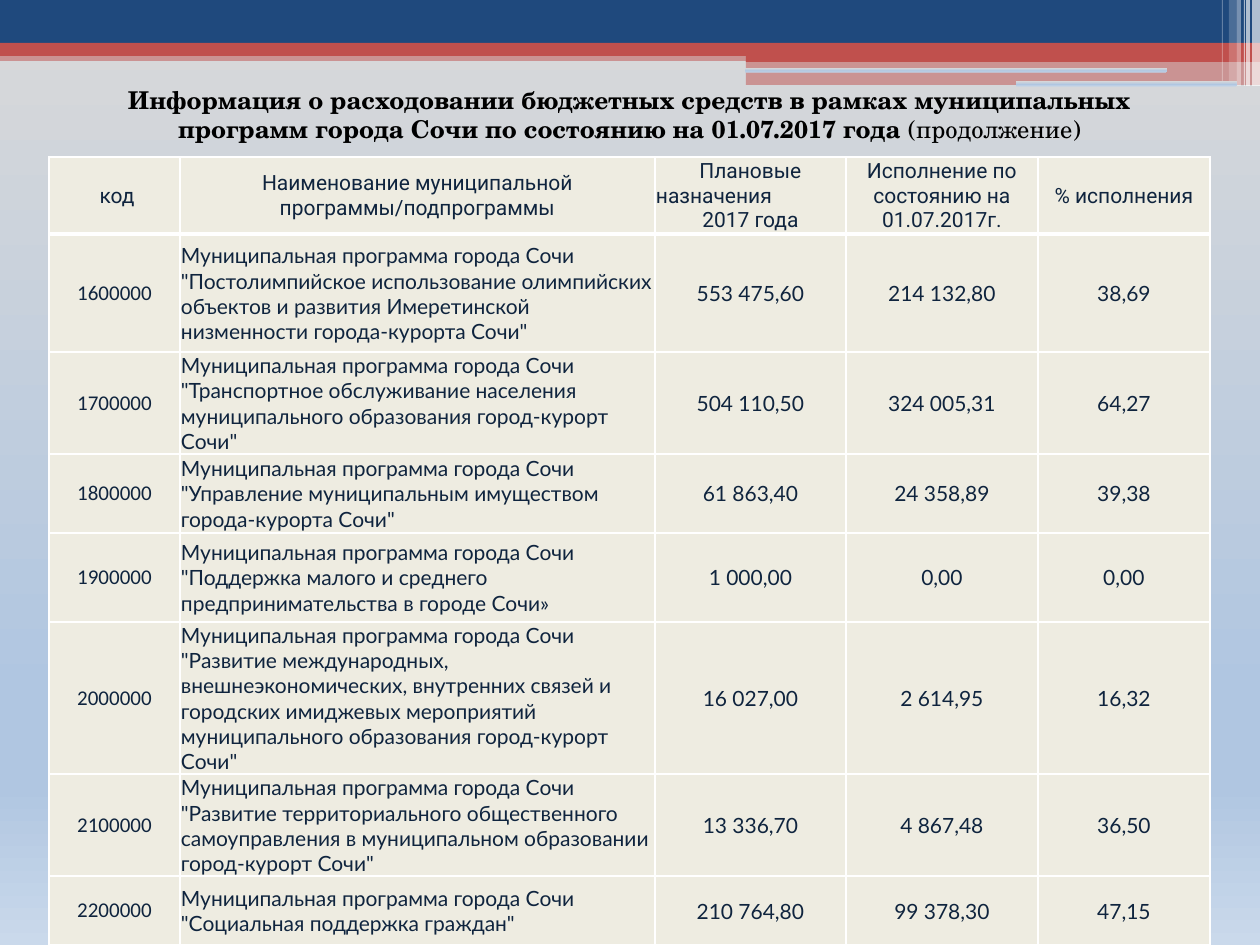
from lxml.etree import SubElement as Sub
from pptx import Presentation
from pptx.dml.color import RGBColor as Rgb
from pptx.enum.shapes import MSO_SHAPE as Kind
from pptx.enum.text import MSO_ANCHOR as Anchor, MSO_AUTO_SIZE as Auto, PP_ALIGN as Align
from pptx.oxml.ns import qn
from pptx.util import Pt

SCALE = 914400 / 126
COLORS = {"navy": "1F497D", "red": "C0504D", "white": "FFFFFF",
          "cream": "EEECE1", "ink": "0F243E", "black": "000000"}
SKY = [(0, "D9D9D9"), (74, "B0C6E1"), (83, "B0C6E1"), (100, "CAD9EB")]
BARS = [
    (0, 50, 1260, 11, "red", 50), (0, 0, 1260, 43, "navy", 100),
    (0, 43, 1260, 13, "red", 100), (746, 49, 514, 13, "red", 100),
    (746, 60, 514, 25, "red", 50),
]
SLOTS = [(745, 68, 422, 4), (1016, 81, 221, 5)]
STRIPES = [(1252, 8, 86, 65), (1246, 4, 86, 65), (1244, 1, 86, 60),
           (1237, 4, 86, 40), (1229, 8, 81, 20), (1222, 1, 81, 30)]
WIDTHS = [131, 475, 191, 192, 172]
HEIGHTS = [77, 118, 89, 79, 89, 134, 93, 69]
HEAD = [" код", "Наименование муниципальной программы/подпрограммы",
        "Плановые\nназначения\n2017 года",
        "Исполнение по состоянию на 01.07.2017г.", "% исполнения"]
LEAD = "Муниципальная программа города Сочи "
PLANS = [
    ("1600000", '"Постолимпийское использование олимпийских объектов и развития '
     'Имеретинской низменности города-курорта Сочи"', "553 475,60", "214 132,80", "38,69"),
    ("1700000", '"Транспортное обслуживание населения муниципального образования '
     'город-курорт Сочи"', "504 110,50", "324 005,31", "64,27"),
    ("1800000", '"Управление муниципальным имуществом города-курорта Сочи"',
     "61 863,40", "24 358,89", "39,38"),
    ("1900000", '"Поддержка малого и среднего предпринимательства в городе Сочи»',
     "1 000,00", "0,00", "0,00"),
    ("2000000", '"Развитие международных, внешнеэкономических, внутренних связей и '
     'городских имиджевых мероприятий муниципального образования город-курорт Сочи"',
     "16 027,00", "2 614,95", "16,32"),
    ("2100000", '"Развитие территориального общественного самоуправления в '
     'муниципальном образовании город-курорт Сочи"', "13 336,70", "4 867,48", "36,50"),
    ("2200000", '"Социальная поддержка граждан"', "210 764,80", "99 378,30", "47,15"),
]


def px(num):
    return round(num * SCALE)


def tint(name):
    return Rgb.from_string(COLORS[name])


class Deck:
    """Holds the style and the current slide."""

    def __init__(self):
        self.prs = Presentation()
        self.prs.slide_width, self.prs.slide_height = px(1260), px(945)
        self.slide = self.prs.slides.add_slide(self.prs.slide_layouts[5])
        self.shade(self.slide.background.fill, self.slide.element)

    def shade(self, fill, node):
        fill.gradient()
        fill.gradient_angle = 270
        stops = node.find(".//" + qn("a:gsLst"))
        stops.clear()
        for pos, color in SKY:
            stop = Sub(stops, qn("a:gs"), pos=str(pos * 1000))
            Sub(stop, qn("a:srgbClr"), val=color)

    def shape(self, kind, *box):
        item = self.slide.shapes.add_shape(kind, *map(px, box))
        item.shadow.inherit = False
        item.line.fill.background()
        return item

    def bar(self, x, y, w, h, color, alpha):
        item = self.shape(Kind.RECTANGLE, x, y, w, h)
        item.fill.solid()
        item.fill.fore_color.rgb = tint(color)
        if alpha < 100:
            node = item.element.spPr.find(".//" + qn("a:srgbClr"))
            Sub(node, qn("a:alpha"), val=str(alpha * 1000))

    def slot(self, *box):
        item = self.shape(Kind.ROUNDED_RECTANGLE, *box)
        self.shade(item.fill, item.element)

    def style(self, par, face, size, color, align):
        par.alignment = align
        par.font.name, par.font.size = face, Pt(size)
        par.font.color.rgb = tint(color)

    def title(self, bold, plain, *box):
        item = self.slide.shapes.title
        item.left, item.top, item.width, item.height = map(px, box)
        item.text_frame.auto_size = Auto.SHAPE_TO_FIT_TEXT
        par = item.text_frame.paragraphs[0]
        self.style(par, "TeX Gyre Schola", 14, "black", Align.CENTER)
        for text, heavy in ((bold, True), (plain, False)):
            run = par.add_run()
            run.text, run.font.bold = text, heavy
        self.slide.shapes.element.append(item.element)

    def edge(self, cell, side, width):
        line = Sub(cell._tc.get_or_add_tcPr(), qn("a:ln" + side), w=str(Pt(width)))
        Sub(Sub(line, qn("a:solidFill")), qn("a:srgbClr"), val=COLORS["white"])

    def cell(self, cell, text, row, col):
        for side in "LRTB":
            thick = (row, side) in ((0, "B"), (1, "T"))
            self.edge(cell, side, 3 if thick else 1)
        cell.fill.solid()
        cell.fill.fore_color.rgb = tint("cream")
        cell.vertical_anchor = Anchor.MIDDLE
        cell.margin_left = cell.margin_right = cell.margin_top = px(1)
        cell.margin_bottom = 0
        cell.text = text
        face = "Roboto" if row == 0 else "Calibri" if col == 0 else "Lato"
        for num, par in enumerate(cell.text_frame.paragraphs):
            left = num == 1 or (row and col == 1)
            self.style(par, face, 12, "ink", Align.LEFT if left else Align.CENTER)
            par.font.bold = False

    def table(self, rows, x, y):
        size = len(rows), len(WIDTHS)
        box = x, y, sum(WIDTHS), sum(HEIGHTS)
        grid = self.slide.shapes.add_table(*size, *map(px, box)).table
        for col, width in zip(grid.columns, WIDTHS):
            col.width = px(width)
        for row, height in zip(grid.rows, HEIGHTS):
            row.height = px(height)
        for r, row in enumerate(rows):
            for c, text in enumerate(row):
                self.cell(grid.cell(r, c), text, r, c)


def main():
    deck = Deck()
    for bar in BARS:
        deck.bar(*bar)
    for slot in SLOTS:
        deck.slot(*slot)
    for x, w, h, alpha in STRIPES:
        deck.bar(x, 0, w, h, "white", alpha)
    deck.table([HEAD] + [(code, LEAD + name, *sums) for code, name, *sums in PLANS], 49, 157)
    deck.title("Информация о расходовании бюджетных средств в рамках муниципальных "
               "программ города Сочи по состоянию на 01.07.2017 года ",
               "(продолжение)", 69, 78, 1121, 72)
    deck.prs.save("out.pptx")


if __name__ == "__main__":
    main()
